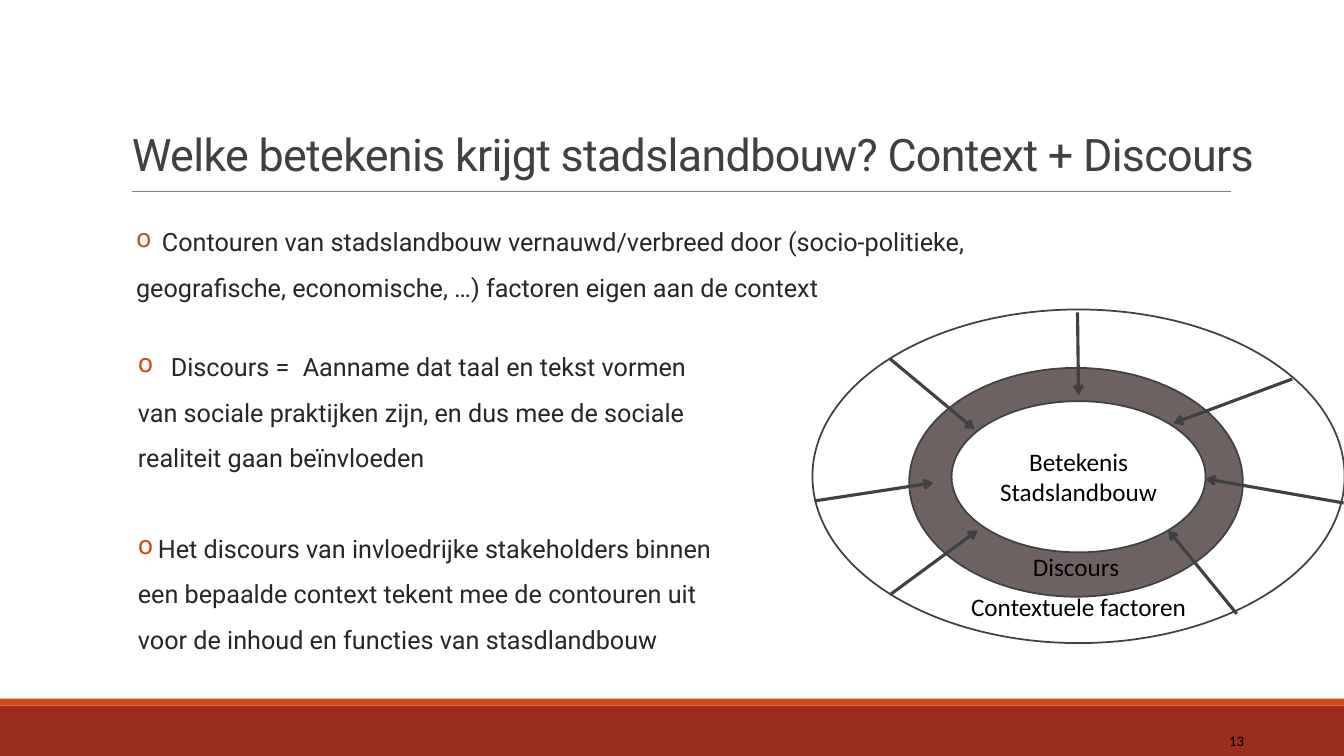
"""Build the slide on the meaning of urban agriculture: context and discourse."""
from dataclasses import dataclass, field
from typing import Any

from lxml.etree import SubElement
from pptx import Presentation
from pptx.dml.color import RGBColor
from pptx.enum.shapes import MSO_CONNECTOR, MSO_SHAPE
from pptx.enum.text import MSO_ANCHOR, PP_ALIGN
from pptx.oxml.ns import qn
from pptx.util import Pt

ORANGE, BRICK, DARK, INK, BLACK = "D34817", "9B2D1F", "404040", "262626", "000000"
Box = tuple[float, float, float, float]
Point = tuple[float, float]


@dataclass(frozen=True)
class Paragraph:
    text: str
    tabs: tuple[float, ...] = ()
    layout: dict[str, Any] = field(default_factory=dict)


@dataclass(frozen=True)
class TextStyle:
    font: str
    size: float
    color: str
    spacing: float = 0
    frame: dict[str, Any] = field(default_factory=dict)


@dataclass(frozen=True)
class TextBlock:
    box: Box
    style: TextStyle
    paragraphs: tuple[Paragraph, ...]


@dataclass(frozen=True)
class Ring:
    box: Box
    fill: str | None
    label: str
    frame: dict[str, Any]


def rgb(value: str) -> RGBColor:
    """Turn a hex string into a colour."""
    return RGBColor.from_string(value)


def apply(target: Any, values: dict[str, Any]) -> None:
    """Set each named attribute on the target."""
    for name, value in values.items():
        setattr(target, name, value)


def add_bullet(paragraph: Any, tabs: tuple[float, ...]) -> None:
    """Give a paragraph an orange bullet and its tab stops."""
    properties = paragraph._p.get_or_add_pPr()
    apply_zero = {"marL": "0", "indent": "0"}
    for name, value in apply_zero.items():
        properties.set(name, value)
    bullet_color = SubElement(properties, qn("a:buClr"))
    SubElement(bullet_color, qn("a:srgbClr"), val=ORANGE)
    SubElement(properties, qn("a:buChar"), char="o")
    stops = SubElement(properties, qn("a:tabLst"))
    for stop in tabs:
        SubElement(stops, qn("a:tab"), pos=str(int(Pt(stop))), algn="l")


def write(frame: Any, style: TextStyle, paragraphs: tuple[Paragraph, ...]) -> None:
    """Fill a text frame with styled paragraphs."""
    apply(frame, {"word_wrap": True, **style.frame})
    for index, content in enumerate(paragraphs):
        paragraph = frame.add_paragraph() if index else frame.paragraphs[0]
        apply(paragraph, content.layout)
        if content.tabs:
            add_bullet(paragraph, content.tabs)
        run = paragraph.add_run()
        run.text = content.text
        apply(run.font, {"name": style.font, "size": Pt(style.size)})
        run.font.color.rgb = rgb(style.color)
        if style.spacing:
            run._r.get_or_add_rPr().set("spc", str(int(style.spacing * 100)))


def add_text(slide: Any, block: TextBlock) -> None:
    """Draw a text block."""
    frame = slide.shapes.add_textbox(*map(Pt, block.box)).text_frame
    write(frame, block.style, block.paragraphs)


def add_figure(slide: Any, kind: MSO_SHAPE, box: Box, fill: str | None, line: str | None) -> Any:
    """Draw a preset shape with an optional fill and outline."""
    figure = slide.shapes.add_shape(kind, *map(Pt, box))
    figure.shadow.inherit = False
    if fill:
        figure.fill.solid()
        figure.fill.fore_color.rgb = rgb(fill)
    else:
        figure.fill.background()
    if line:
        figure.line.color.rgb = rgb(line)
        figure.line.width = Pt(1.25)
    else:
        figure.line.fill.background()
    return figure


def add_line(slide: Any, start: Point, end: Point, color: str, width: float, arrow: bool) -> None:
    """Draw a straight line, with an arrowhead at its end if asked."""
    line = slide.shapes.add_connector(MSO_CONNECTOR.STRAIGHT, *map(Pt, start + end))
    line.line.color.rgb = rgb(color)
    line.line.width = Pt(width)
    if arrow:
        SubElement(line.line._get_or_add_ln(), qn("a:tailEnd"), type="arrow")
    SubElement(line._element.spPr, qn("a:effectLst"))


LOOSE = {"line_spacing": 1.5}
CENTERED = {"alignment": PP_ALIGN.CENTER}
MIDDLE = {"vertical_anchor": MSO_ANCHOR.MIDDLE}
TOP = {"vertical_anchor": MSO_ANCHOR.TOP, "margin_bottom": 0}

BANDS: tuple[tuple[Box, str], ...] = (
    ((0, 504, 960, 36), BRICK),
    ((0, 499, 960, 5), ORANGE),
)

TITLE = TextBlock(
    (87.12, 42.48, 832.32, 132.48 - 42.48),
    TextStyle("Roboto", 32, DARK, -0.5, {"vertical_anchor": MSO_ANCHOR.BOTTOM}),
    (Paragraph("Welke betekenis krijgt stadslandbouw? Context + Discours", layout=LOOSE),),
)
CONTOURS = TextBlock(
    (97.2, 147.6, 648, 356.4),
    TextStyle("Roboto", 18, INK, frame={"margin_left": 0, "margin_right": 0}),
    (Paragraph(
        "\tContouren van stadslandbouw vernauwd/verbreed door (socio-politieke, "
        "geografische, economische, …) factoren eigen aan de context",
        (18.5,), {**LOOSE, "space_before": Pt(12), "space_after": Pt(2)}),),
)
PAGE_NUMBER = TextBlock(
    (792.72, 511.2, 102.96, 28.8),
    TextStyle("Calibri", 10.5, BLACK, frame=MIDDLE),
    (Paragraph("13", layout={**LOOSE, "alignment": PP_ALIGN.RIGHT}),),
)
DISCOURSE = TextBlock(
    (91.44, 236.88, 437.04, 236.16),
    TextStyle("Roboto", 18, INK),
    (
        Paragraph(
            "\tDiscours =\tAanname dat taal en tekst vormen van sociale praktijken zijn, "
            "en dus mee de sociale realiteit gaan beïnvloeden",
            (23.5, 117.75), LOOSE),
        Paragraph(
            "\tHet discours van invloedrijke stakeholders binnen een bepaalde context "
            "tekent mee de contouren uit voor de inhoud en functies van stasdlandbouw",
            (14.25,), {**LOOSE, "space_before": Pt(32.5)}),
    ),
)

RINGS = (
    Ring((649.44, 262.8, 238.32, 163.44), "6E6263", "Discours",
         {**TOP, "margin_top": Pt(107.3)}),
    Ring((580.32, 221.04, 380.16, 238.32), None, "Contextuele factoren",
         {**TOP, "margin_top": Pt(166.7)}),
    Ring((679.68, 286.56, 181.44, 108), "FFFFFF", "Betekenis Stadslandbouw", MIDDLE),
)
INFLUENCES: tuple[tuple[Point, Point], ...] = (
    ((581.76, 357.84), (666.72, 344.88)),
    ((635.76, 256.32), (696.24, 306.72)),
    ((635.76, 424.8), (698.4, 378.72)),
    ((769.68, 223.2), (770.4, 282.24)),
    ((923.04, 270.72), (838.08, 302.4)),
    ((959.76, 359.28), (861.12, 342)),
    ((883.44, 438.48), (834.48, 378.72)),
)


def main() -> None:
    """Draw the slide and save it."""
    deck = Presentation()
    apply(deck, {"slide_width": Pt(960), "slide_height": Pt(540)})
    slide = deck.slides.add_slide(deck.slide_layouts[6])
    for box, fill in BANDS:
        add_figure(slide, MSO_SHAPE.RECTANGLE, box, fill, None)
    add_line(slide, (94.32, 136.8), (879.12, 136.8), "808080", 0.5, False)
    for block in (TITLE, CONTOURS, PAGE_NUMBER):
        add_text(slide, block)
    for ring in RINGS:
        ellipse = add_figure(slide, MSO_SHAPE.OVAL, ring.box, ring.fill, DARK)
        style = TextStyle("Calibri", 18, BLACK, frame=ring.frame)
        write(ellipse.text_frame, style, (Paragraph(ring.label, layout=CENTERED),))
    for start, end in INFLUENCES:
        add_line(slide, start, end, DARK, 2.25, True)
    add_text(slide, DISCOURSE)
    deck.save("out.pptx")


if __name__ == "__main__":
    main()
